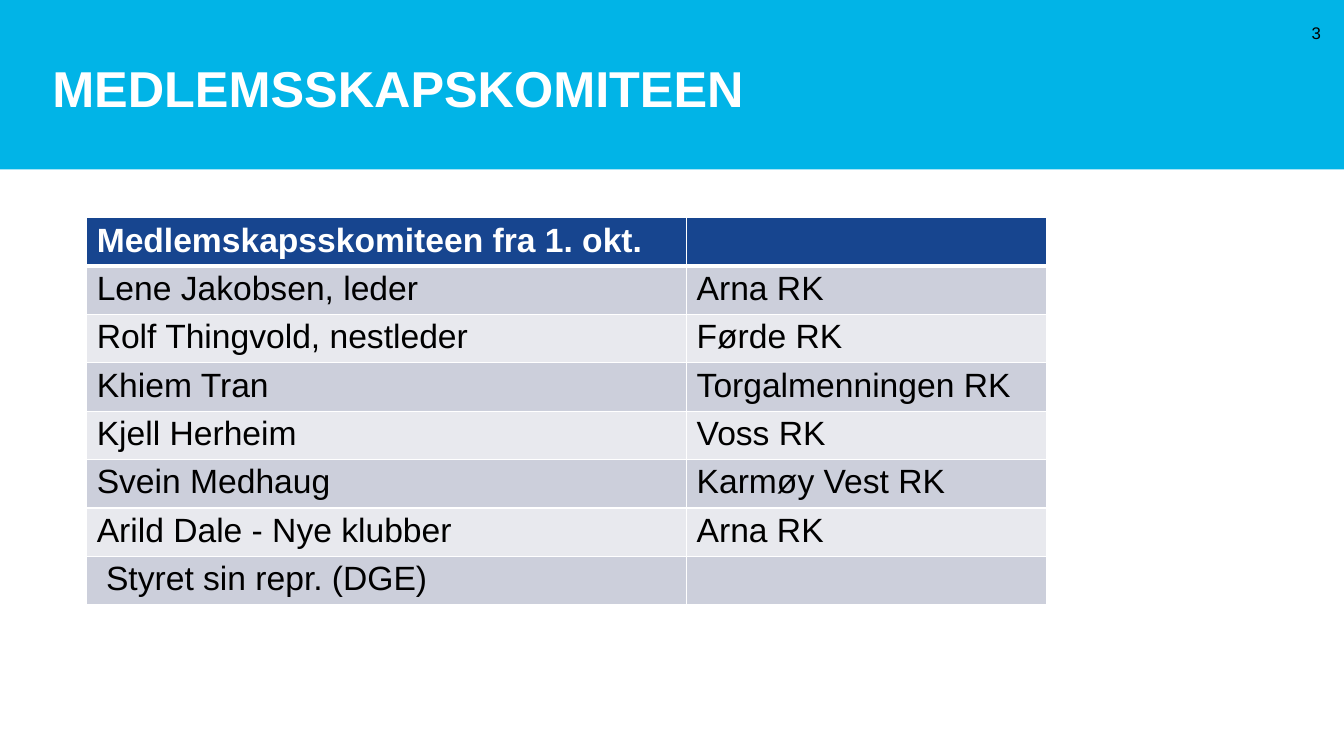
"""Build the membership committee slide."""
from dataclasses import dataclass

from lxml import etree
from pptx import Presentation
from pptx.dml.color import RGBColor
from pptx.enum import shapes, text
from pptx.oxml.ns import qn
from pptx.util import Inches, Pt

TITLE = "MEDLEMSSKAPSKOMITEEN"
PAGE_NUMBER = "3"
MEMBERS = [
    ("Medlemskapsskomiteen fra 1. okt.", ""),
    ("Lene Jakobsen, leder", "Arna RK"),
    ("Rolf Thingvold, nestleder", "Førde RK"),
    ("Khiem Tran", "Torgalmenningen RK"),
    ("Kjell Herheim", "Voss RK"),
    ("Svein Medhaug", "Karmøy Vest RK"),
    ("Arild Dale - Nye klubber", "Arna RK"),
    (" Styret sin repr. (DGE)", ""),
]
COLUMN_WIDTHS = (5.95, 3.57)
ROW_HEIGHT = 0.47


@dataclass(frozen=True)
class Theme:
    """Colours and type sizes of the slide."""
    font: str = "Arial"
    banner: str = "01B4E7"
    header: str = "17458F"
    bands: tuple = ("CCCFDB", "E8E9EE")
    light: str = "FFFFFF"
    dark: str = "000000"
    title_size: int = 36
    table_size: int = 24
    number_size: int = 12


THEME = Theme()


def paint(fill, color):
    fill.solid()
    fill.fore_color.rgb = RGBColor.from_string(color)


def write(frame, wording, size, color, bold=False):
    para = frame.paragraphs[0]
    para.text = wording
    para.font.name = THEME.font
    para.font.size = Pt(size)
    para.font.bold = bold
    para.font.color.rgb = RGBColor.from_string(color)
    return para


def add_label(page, place, wording, size, color, anchor, bold=False):
    box = page.shapes.add_textbox(*map(Inches, place))
    frame = box.text_frame
    frame.word_wrap = True
    frame.vertical_anchor = anchor
    return frame, write(frame, wording, size, color, bold)


def set_borders(cell, widths):
    properties = cell._tc.get_or_add_tcPr()
    for position, (side, width) in enumerate(widths.items()):
        line = etree.Element(qn(f"a:{side}"), w=str(Pt(width)))
        fill = etree.SubElement(line, qn("a:solidFill"))
        etree.SubElement(fill, qn("a:srgbClr"), val=THEME.light)
        properties.insert(position, line)


def add_members(page):
    size = (sum(COLUMN_WIDTHS), ROW_HEIGHT * len(MEMBERS))
    table = page.shapes.add_table(
        len(MEMBERS), len(COLUMN_WIDTHS), *map(Inches, (0.86, 2.16, *size))).table
    for column, width in zip(table.columns, COLUMN_WIDTHS):
        column.width = Inches(width)
    for index, member in enumerate(MEMBERS):
        table.rows[index].height = Inches(ROW_HEIGHT)
        heading = index == 0
        fill = THEME.header if heading else THEME.bands[(index - 1) % 2]
        color = THEME.light if heading else THEME.dark
        borders = {"lnL": 1, "lnR": 1, "lnT": 3 if index == 1 else 1,
                   "lnB": 3 if heading else 1}
        for cell, wording in zip(table.rows[index].cells, member):
            paint(cell.fill, fill)
            cell.margin_top = cell.margin_bottom = Inches(0.04)
            write(cell.text_frame, wording, THEME.table_size, color, heading)
            set_borders(cell, borders)


def main():
    deck = Presentation()
    deck.slide_width, deck.slide_height = Inches(13.33), Inches(7.5)
    page = deck.slides.add_slide(deck.slide_layouts[6])

    banner = page.shapes.add_shape(
        shapes.MSO_SHAPE.RECTANGLE, 0, 0, deck.slide_width, Inches(1.68))
    banner.shadow.inherit = False
    banner.line.fill.background()
    paint(banner.fill, THEME.banner)

    frame, para = add_label(page, (0.42, -0.32, 12.58, 1.59), TITLE, THEME.title_size,
                            THEME.light, text.MSO_ANCHOR.BOTTOM, bold=True)
    frame.margin_top, frame.margin_bottom = 0, Inches(0.1)
    para.line_spacing = 0.9

    _, para = add_label(page, (12.74, 0.13, 0.46, 0.4), PAGE_NUMBER, THEME.number_size,
                        THEME.dark, text.MSO_ANCHOR.MIDDLE)
    para.alignment = text.PP_ALIGN.RIGHT

    add_members(page)
    deck.save("out.pptx")


if __name__ == "__main__":
    main()
